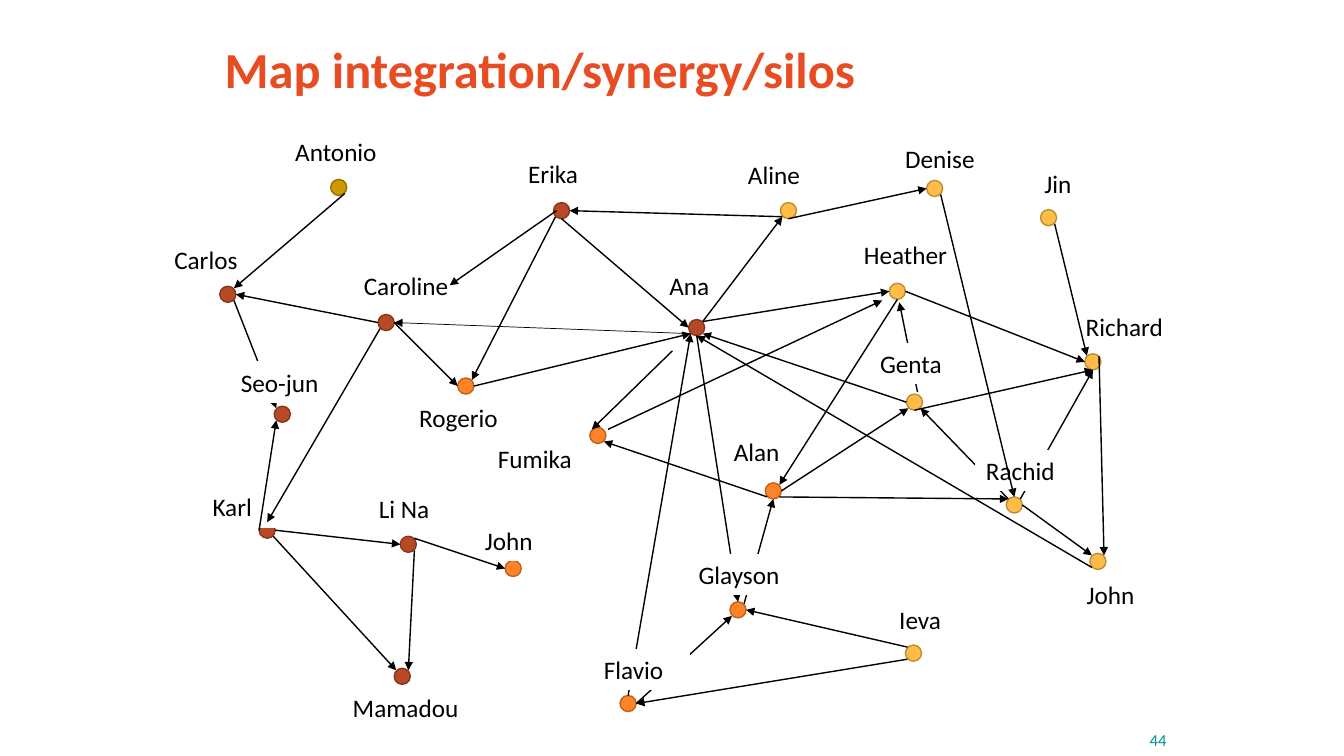
"""Build a slide mapping who works with whom across four groups of people."""
from dataclasses import dataclass

from lxml.etree import SubElement
from pptx import Presentation
from pptx.dml.color import RGBColor
from pptx.enum.shapes import MSO_CONNECTOR as Connector, MSO_SHAPE as Shape
from pptx.enum.text import MSO_ANCHOR as Anchor, PP_ALIGN as Align
from pptx.oxml.ns import qn
from pptx.util import Inches, Pt


@dataclass(frozen=True)
class Theme:
    font: str = "Calibri"
    title: str = "E84C22"
    number: str = "009193"
    ink: str = "000000"
    paper: str = "FFFFFF"
    olive: tuple = ("CC9900", "977100")
    rust: tuple = ("B64926", "87361C")
    orange: tuple = ("FF8427", "BD621D")
    amber: tuple = ("FFBD47", "BD8C35")
    title_size: int = 36
    label_size: int = 18
    number_size: int = 12


theme = Theme()
dot_size = 0.16
radius = dot_size / 2
diagonal = 0.06
sites = {
    "N": (0, -radius), "S": (0, radius), "W": (-radius, 0), "E": (radius, 0),
    "NW": (-diagonal, -diagonal), "NE": (diagonal, -diagonal),
    "SW": (-diagonal, diagonal), "SE": (diagonal, diagonal),
}

# name: dot left, dot top, group, label left, label top, label width
people = {
    "Antonio": (3.28, 1.78, theme.olive, 2.83, 1.30, 1.56),
    "Carlos": (2.18, 2.84, theme.rust, 1.63, 2.37, 1.01),
    "Seo-jun": (2.72, 4.03, theme.rust, 2.29, 3.59, 1.07),
    "Karl": (2.57, 5.18, theme.rust, 2.01, 4.83, 0.78),
    "Li Na": (3.97, 5.32, theme.rust, 3.66, 4.84, 0.78),
    "Caroline": (3.75, 3.12, theme.rust, 3.51, 2.63, 1.09),
    "Erika": (5.49, 2.01, theme.rust, 5.14, 1.52, 0.97),
    "Mamadou": (3.91, 6.63, theme.rust, 3.40, 6.82, 1.29),
    "John": (5.01, 5.56, theme.orange, 4.71, 5.16, 0.78),
    "Rogerio": (4.54, 3.75, theme.orange, 4.06, 3.94, 1.07),
    "Fumika": (5.85, 4.24, theme.orange, 4.84, 4.35, 0.95),
    "Ana": (6.83, 3.17, theme.rust, 6.54, 2.63, 0.78),
    "Flavio": (6.15, 6.90, theme.orange, 5.89, 6.44, 0.95),
    "Alan": (7.59, 4.79, theme.orange, 7.18, 4.28, 0.97),
    "Glayson": (7.24, 5.97, theme.orange, 6.83, 5.50, 1.06),
    "Heather": (8.82, 2.81, theme.amber, 8.47, 2.33, 1.07),
    "Jin": (10.32, 2.08, theme.amber, 10.26, 1.62, 1.09),
    "Richard": (10.76, 3.51, theme.amber, 10.67, 3.04, 1.07),
    "Denise": (9.19, 1.79, theme.amber, 8.88, 1.37, 0.97),
    "John2": (10.81, 5.49, theme.amber, 10.68, 5.70, 0.87),
    "Genta": (8.99, 3.91, theme.amber, 8.63, 3.41, 1.18),
    "Ieva": (8.98, 6.40, theme.amber, 8.82, 5.95, 1.35),
    "Aline": (7.74, 2.01, theme.amber, 7.32, 1.53, 1.01),
    "Rachid": (9.98, 4.93, theme.amber, 9.68, 4.47, 1.01),
}

arrows_behind_labels = [
    ("Aline.S", "Denise.W"), ((6.67, 3.48), "Fumika.NW"),
    ("Alan.SW", "Fumika.SE"), ("Li Na.SE", "Mamadou.NE"),
    ("Karl.SE", "Mamadou.NW"), ("Karl.E", "Li Na.W"),
    ("Carlos.SE", "Seo-jun.NW"), ("Caroline.W", "Carlos.E"),
    ("Heather.E", "Richard.W"), ("Genta.S", "Richard.S"),
    ("Genta.W", "Ana.SE"), ("Ana.NE", "Heather.W"),
    ("Ieva.NW", "Glayson.E"), ("Ieva.SW", "Flavio.E"),
    ("Rachid.E", "John2.NW"), ("Rachid.NW", "Genta.SE"),
    ("Rachid.NE", "Richard.S"), ((9.1, 3.89), (8.92, 3)),
    ("Ana.S", "Glayson.N"), ("Ana.SW", "Caroline.E", 0.5),
    ("Flavio.E", "Glayson.SW"), ("Glayson.NE", "Alan.S"),
    ("Aline.SW", "Erika.E"), ("John2.SW", "Ana.S"),
    ("Richard.NE", "John2.NE"), ("Flavio.N", "Ana.SW"),
    ("Alan.SE", "Rachid.NW"),
]
arrows_over_labels = [
    ((6.03, 4.26), (8.75, 2.98)), ("Caroline.SW", "Karl.N"),
    ("Karl.W", "Seo-jun.SW"), ("Caroline.E", "Rogerio.W"),
    ("Erika.SW", "Rogerio.NE"), ("Rogerio.E", "Ana.SW"),
    ("Antonio.SE", "Carlos.NE"), ((5.52, 2.09), (4.46, 2.83)),
    ("Jin.SE", "Richard.NW"), ("Heather.S", "Alan.NE"),
    ("Alan.E", "Genta.SW"), ("Denise.SE", "Rachid.N"),
    ("Ana.NE", "Aline.SW"), ("Erika.S", "Ana.W"),
    ("Li Na.NE", "John.W"),
]

deck = Presentation()
deck.slide_width, deck.slide_height = Inches(13.33), Inches(7.5)
page = deck.slides.add_slide(deck.slide_layouts[6])


def write(box, text, size, color, anchor=Anchor.TOP, align=Align.LEFT):
    """Set the single line of text in a box and return its paragraph."""
    frame = box.text_frame
    frame.word_wrap = True
    frame.vertical_anchor = anchor
    frame.text = text
    para = frame.paragraphs[0]
    para.alignment = align
    para.font.name = theme.font
    para.font.size = Pt(size)
    para.font.color.rgb = RGBColor.from_string(color)
    return para


def draw_arrows(arrows):
    """Draw arrows between dot sites or free points."""
    for start, end, *width in arrows:
        points = []
        for place in (start, end):
            if isinstance(place, str):
                name, site = place.split(".")
                left, top = people[name][:2]
                across, down = sites[site]
                place = (left + radius + across, top + radius + down)
            points += [Inches(value) for value in place]
        arrow = page.shapes.add_connector(Connector.STRAIGHT, *points)
        arrow.line.color.rgb = RGBColor.from_string(theme.ink)
        arrow.line.width = Pt(width[0] if width else 1)
        SubElement(arrow.line._get_or_add_ln(), qn("a:tailEnd"), type="triangle")
        SubElement(arrow._element.spPr, qn("a:effectLst"))


title = page.shapes.add_textbox(Inches(2.13), Inches(0.4), Inches(9), Inches(1.25))
heading = write(title, "Map integration/synergy/silos", theme.title_size, theme.title)
heading.font.bold = True
heading.line_spacing = 0.9

number = page.shapes.add_textbox(Inches(9.34), Inches(7.14), Inches(2.33), Inches(0.4))
write(number, "44", theme.number_size, theme.number, Anchor.MIDDLE, Align.RIGHT)

for left, top, (fill, outline), *_ in people.values():
    dot = page.shapes.add_shape(
        Shape.OVAL, Inches(left), Inches(top), Inches(dot_size), Inches(dot_size))
    dot.shadow.inherit = False
    dot.fill.solid()
    dot.fill.fore_color.rgb = RGBColor.from_string(fill)
    dot.line.color.rgb = RGBColor.from_string(outline)
    dot.line.width = Pt(1)

draw_arrows(arrows_behind_labels)

for name, (*_, left, top, width) in people.items():
    label = page.shapes.add_shape(
        Shape.RECTANGLE, Inches(left), Inches(top), Inches(width), Inches(0.4))
    label.shadow.inherit = False
    label.fill.solid()
    label.fill.fore_color.rgb = RGBColor.from_string(theme.paper)
    label.line.color.rgb = RGBColor.from_string(theme.paper)
    label.line.width = Pt(0.75)
    write(label, name.rstrip("2"), theme.label_size, theme.ink)

draw_arrows(arrows_over_labels)

deck.save("out.pptx")
